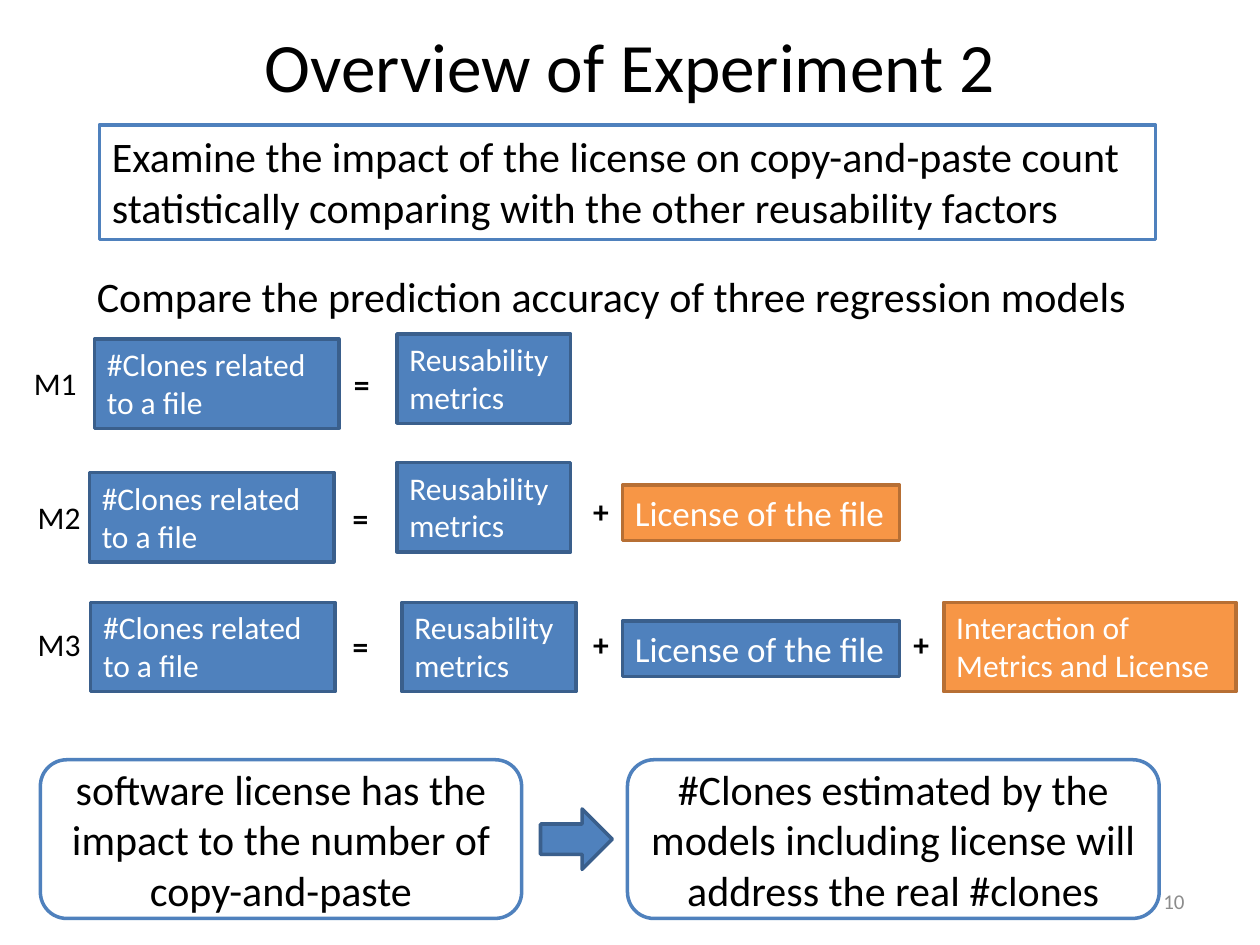
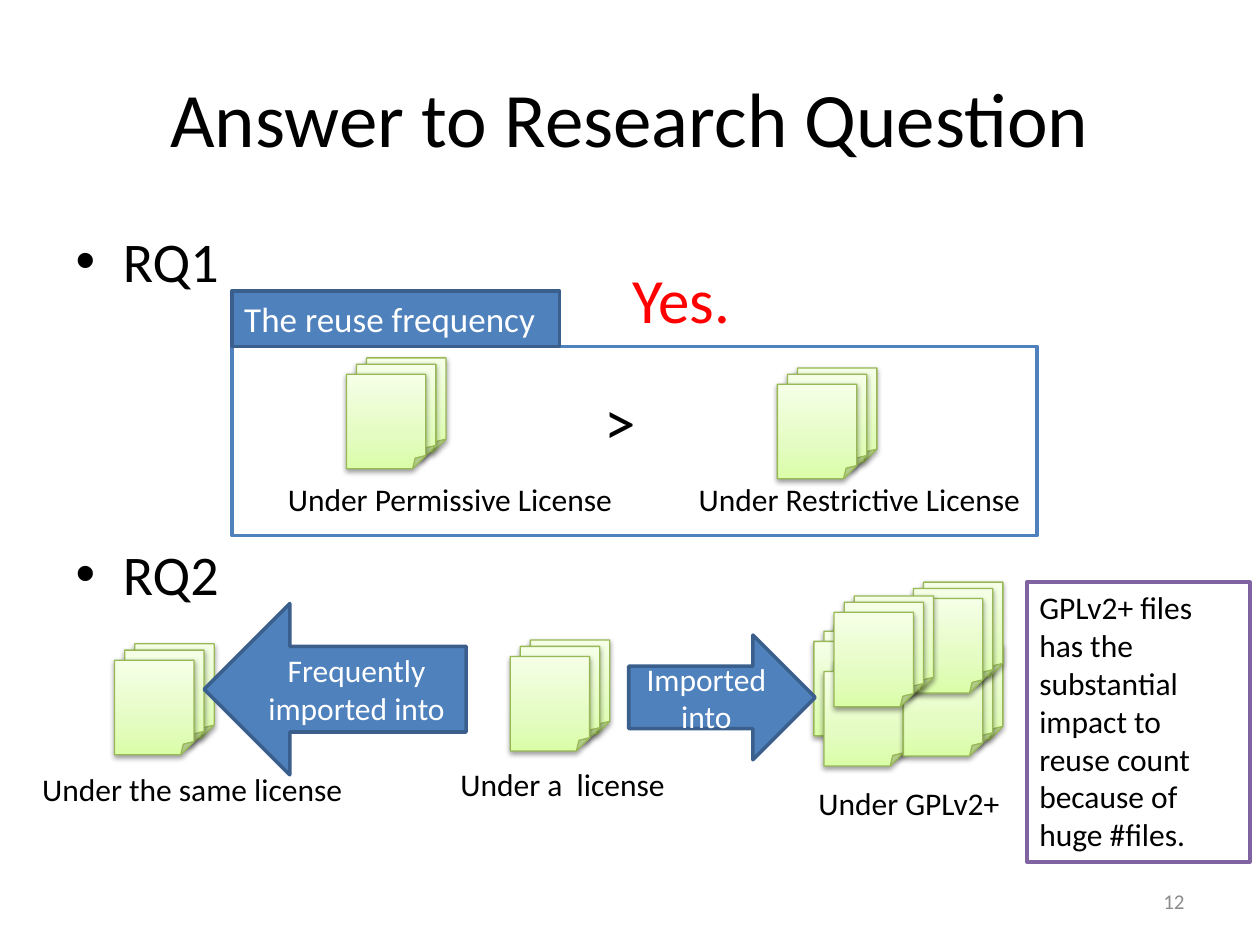
from copy import deepcopy

from lxml import etree
from pptx import Presentation
from pptx.dml import color as dml
from pptx.enum import shapes, text
from pptx.oxml import ns
from pptx import util as u

FONT = "Calibri"
BLACK, WHITE, RED, GREY = "000000", "FFFFFF", "FF0000", "8C8C8C"
BLUE, BLUE_EDGE = "4F81BD", "3A5F8C"
ORANGE, ORANGE_EDGE = "F79646", "B76F34"
PURPLE, LEAF_EDGE = "8064A2", "98B955"
LEAF_STOPS = [(0, "DAFDA7"), (0.35, "E4FCC2"), (1, "F5FFE7")]
PRESET, ALIGN, ANCHOR = shapes.MSO_SHAPE, text.PP_ALIGN, text.MSO_ANCHOR

presentation = Presentation()
presentation.slide_width, presentation.slide_height = u.Inches(10), u.Inches(7.5)
COLUMN = presentation.slide_width / 100
ROW = presentation.slide_height / 75


def colour(value):
    return dml.RGBColor.from_string(value)


def add_box(parent, preset, place, words="", size=18, ink=BLACK, fill=None, edge=None,
            edge_width=2, bold=False, align=ALIGN.LEFT, anchor=ANCHOR.TOP, wrap=None):
    left, top, width, height = place
    area = [int(left * COLUMN), int(top * ROW), int(width * COLUMN), int(height * ROW)]
    if preset is None:
        shape = parent.shapes.add_textbox(*area)
    else:
        shape = parent.shapes.add_shape(preset, *area)
        shape.shadow.inherit = False
        shape.line.color.rgb = colour(edge)
        shape.line.width = u.Pt(edge_width)
        if fill:
            shape.fill.solid()
            shape.fill.fore_color.rgb = colour(fill)
    if words:
        frame = shape.text_frame
        frame.text = words
        frame.word_wrap = preset is not None if wrap is None else wrap
        if not frame.word_wrap:
            frame.auto_size = text.MSO_AUTO_SIZE.SHAPE_TO_FIT_TEXT
        frame.vertical_anchor = anchor
        for paragraph in frame.paragraphs:
            paragraph.alignment = align
            for run in paragraph.runs:
                run.font.name, run.font.size, run.font.bold = FONT, u.Pt(size), bold
                run.font.color.rgb = colour(ink)
    return shape


FILLED = {"fill": BLUE, "edge": BLUE_EDGE, "ink": WHITE}
ACCENT = {"fill": ORANGE, "edge": ORANGE_EDGE, "ink": WHITE}
OUTLINED = {"fill": WHITE, "edge": BLUE}
CENTRED = {"align": ALIGN.CENTER, "anchor": ANCHOR.MIDDLE}

slides = []
for layout, title, size, top, height, number in [
    (5, "Overview of Experiment 2", 39.6, 1.3, 7.7, "10"),
    (1, "Answer to Research Question", 44, 3, 12.5, "12"),
]:
    slide = presentation.slides.add_slide(presentation.slide_layouts[layout])
    heading = slide.shapes.title
    heading.left, heading.top = int(5 * COLUMN), int(top * ROW)
    heading.width, heading.height = int(90 * COLUMN), int(height * ROW)
    heading.text_frame.text = title
    heading.text_frame.auto_size = text.MSO_AUTO_SIZE.NONE
    font = heading.text_frame.paragraphs[0].runs[0].font
    font.name, font.size, font.color.rgb = FONT, u.Pt(size), colour(BLACK)
    add_box(slide, None, (71.7, 69.5, 23.3, 4), number, 12, GREY,
            align=ALIGN.RIGHT, anchor=ANCHOR.MIDDLE, wrap=True)
    slides.append(slide)
experiment, answer = slides

add_box(experiment, PRESET.RECTANGLE, (7.9, 9.9, 83.8, 9.1),
        "Examine the impact of the license on copy-and-paste count "
        "statistically comparing with the other reusability factors", 24, **OUTLINED)
add_box(experiment, None, (6.7, 21, 84.5, 5),
        "Compare the prediction accuracy of three regression models", 24)

for model, label_at, clones_at, equals_at, metrics_at in [
    ("M1", (1.7, 28.4), (7.5, 26.9), (27.1, 28.5), (31.5, 26.5)),
    ("M2", (2, 39), (7.1, 37.5), (27, 39.1), (31.5, 36.7)),
    ("M3", (2, 49.1), (7.2, 47.8), (27, 49.3), (31.9, 47.8)),
]:
    add_box(experiment, None, (*label_at, 5.5, 4), model)
    add_box(experiment, PRESET.RECTANGLE, (*clones_at, 19.4, 7.1),
            "#Clones related to a file", **FILLED)
    add_box(experiment, None, (*equals_at, 3.3, 4), "=", bold=True)
    add_box(experiment, PRESET.RECTANGLE, (*metrics_at, 13.8, 7.1),
            "Reusability\nmetrics", **FILLED)

for left, top in [(46.1, 38.6), (46.1, 49.1), (71.5, 49.1)]:
    add_box(experiment, None, (left, top, 3.3, 4), "+", bold=True)
for top, style in [(38.5, ACCENT), (49.3, FILLED)]:
    add_box(experiment, PRESET.RECTANGLE, (49.4, top, 22, 4.4),
            "License of the file", 20, **style)
add_box(experiment, PRESET.RECTANGLE, (74.9, 47.8, 23.2, 7.1),
        "Interaction of Metrics and License", **ACCENT)

for left, width, claim in [
    (3.2, 38.2, "software license has the impact to the number of copy-and-paste"),
    (49.8, 42.2, "#Clones estimated by the models including license will "
                 "address the real #clones"),
]:
    add_box(experiment, PRESET.ROUNDED_RECTANGLE, (left, 60.3, width, 12.6),
            claim, 24, **OUTLINED, **CENTRED)
add_box(experiment, PRESET.RIGHT_ARROW, (42.9, 64.2, 5.7, 4.8), **FILLED)

questions = answer.placeholders[1]
questions.left, questions.top = int(5 * COLUMN), int(17.5 * ROW)
questions.width, questions.height = int(90 * COLUMN), int(49.5 * ROW)
questions.text_frame.text = "RQ1\nRQ2"
questions.text_frame.auto_size = text.MSO_AUTO_SIZE.NONE
for paragraph in questions.text_frame.paragraphs:
    font = paragraph.runs[0].font
    font.name, font.size, font.color.rgb = FONT, u.Pt(32), colour(BLACK)
paragraph.space_before = u.Pt(140)

add_box(answer, PRESET.RECTANGLE, (18.4, 27.5, 63.9, 15), **OUTLINED)
add_box(answer, PRESET.RECTANGLE, (18.4, 23.1, 26, 4.4),
        "The reuse frequency", 20, **FILLED)
add_box(answer, None, (47, 29.9, 4.5, 7.1), ">", 36)
add_box(answer, None, (49.2, 20.2, 9.9, 7.1), "Yes.", 36, RED)

for left, top, width, caption in [
    (21.3, 37.6, 28.6, " Under Permissive License"),
    (53.9, 37.6, 28.4, " Under Restrictive License"),
    (35, 60.2, 19, " Under a  license"),
    (1.8, 60.6, 26.7, " Under the same license"),
    (63.4, 61.7, 17.1, " Under GPLv2+"),
]:
    add_box(answer, None, (left, top, width, 4), caption)

for stacks in [
    [(27.5, 29.7)],
    [(61.7, 30.5)],
    [(40.5, 52.1)],
    [(9.1, 52.4)],
    [(64.6, 50.9), (68.6, 50.1), (65.4, 53.3), (71.7, 52.5), (71.7, 47.5), (66.2, 48.6)],
]:
    group = answer.shapes.add_group_shape()
    for left, top in stacks:
        for right_shift, up_shift in [(1.6, 1.3), (0.8, 0.8), (0, 0)]:
            page = add_box(group, PRESET.FOLDED_CORNER,
                           (left + right_shift, top - up_shift, 6.3, 7.5),
                           edge=LEAF_EDGE, edge_width=0.75)
            page.fill.gradient()
            page.fill.gradient_angle = 90
            properties = page.element.spPr
            stop_list = properties.find(".//" + ns.qn("a:gsLst"))
            stop_list.append(deepcopy(stop_list[-1]))
            for stop, (position, value) in zip(page.fill.gradient_stops, LEAF_STOPS):
                stop.position = position
                stop.color.rgb = colour(value)
            shadow = etree.SubElement(
                properties.find(ns.qn("a:effectLst")), ns.qn("a:outerShdw"),
                blurRad=str(u.Pt(3.1)), dist=str(u.Pt(1.6)), dir="5400000", rotWithShape="0")
            tint = etree.SubElement(shadow, ns.qn("a:srgbClr"), val=BLACK)
            etree.SubElement(tint, ns.qn("a:alpha"), val="38000")

add_box(answer, PRESET.LEFT_ARROW, (16.2, 47.9, 20.8, 13.6),
        "Frequently\nimported into", **FILLED, **CENTRED)
add_box(answer, PRESET.RIGHT_ARROW, (49.9, 50.4, 14.8, 9.9),
        "Imported\ninto", **FILLED, **CENTRED)
add_box(answer, PRESET.RECTANGLE, (81.5, 46.2, 17.7, 22.2),
        "GPLv2+ files has the substantial impact to reuse count because of huge #files.",
        fill=WHITE, edge=PURPLE)

presentation.save("out.pptx")
